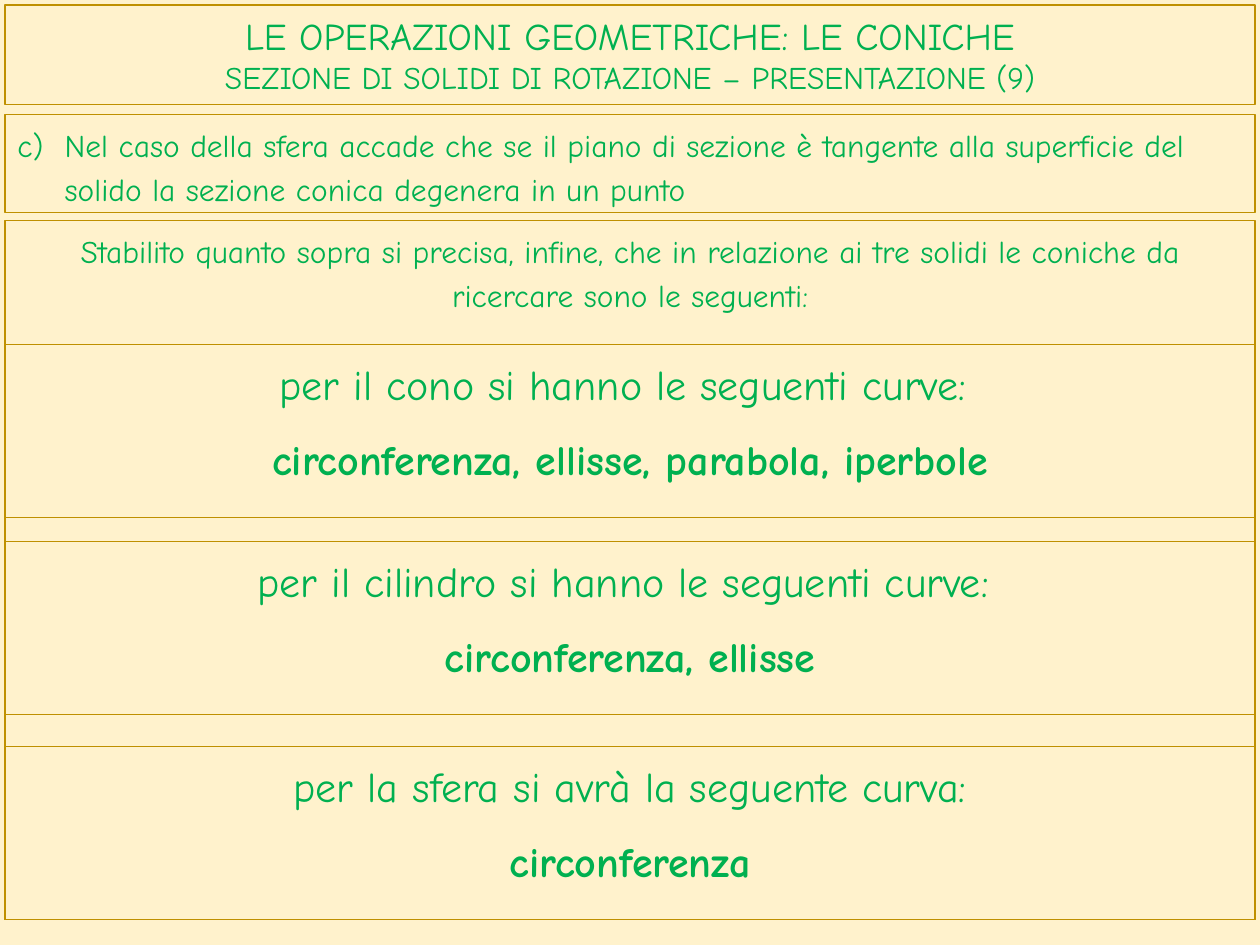
from pptx import Presentation
from pptx.dml.color import RGBColor
from pptx.enum.text import MSO_ANCHOR, MSO_AUTO_SIZE, PP_ALIGN
from pptx.util import Pt
from lxml.etree import SubElement
from pptx.oxml.ns import qn


def color(value):
    return RGBColor.from_string(value)


class SlideBuilder:
    font = "Comic Neue"
    ink = "00B050"
    border = "BF9000"
    left = 2.88
    width = 714.24

    def __init__(self, deck, background):
        self.slide = deck.slides.add_slide(deck.slide_layouts[5])
        self.slide.background.fill.solid()
        self.slide.background.fill.fore_color.rgb = color(background)

    def place(self, box, top, height):
        box.left, box.top = Pt(self.left), Pt(top)
        box.width, box.height = Pt(self.width), Pt(height)
        box.line.color.rgb = color(self.border)
        box.line.width = Pt(0.75)
        box.text_frame.word_wrap = True
        box.text_frame.auto_size = MSO_AUTO_SIZE.NONE

    def format_span(self, span, size, bold=False):
        span.font.name = self.font
        span.font.size = Pt(size)
        span.font.bold = bold
        span.font.color.rgb = color(self.ink)

    def title(self, lines, sizes, top, height):
        box = self.slide.shapes.title
        self.place(box, top, height)
        box.text_frame.vertical_anchor = MSO_ANCHOR.MIDDLE
        box.text_frame.text = "\v".join(lines)
        para = box.text_frame.paragraphs[0]
        para.alignment = PP_ALIGN.CENTER
        para.line_spacing = 1.0
        for span, size in zip(para.runs, sizes):
            self.format_span(span, size)

    def text_box(self, lines, size, top, height, alignment=PP_ALIGN.CENTER):
        box = self.slide.shapes.add_textbox(0, 0, 0, 0)
        self.place(box, top, height)
        box.text_frame.text = "\n".join(lines)
        for index, para in enumerate(box.text_frame.paragraphs):
            para.alignment = alignment
            para.line_spacing = 1.15
            para.space_after = Pt(10)
            self.format_span(para.runs[0], size, bold=index > 0)
        return box

    def lettered_box(self, text, start, size, top, height):
        box = self.text_box([text], size, top, height, PP_ALIGN.LEFT)
        properties = box.text_frame.paragraphs[0]._p.get_or_add_pPr()
        properties.set("marL", str(Pt(27)))
        properties.set("indent", str(Pt(-27)))
        SubElement(properties, qn("a:buFont"), typeface="+mj-lt")
        SubElement(properties, qn("a:buAutoNum"), type="alphaLcParenR", startAt=str(start))


def main():
    deck = Presentation()
    deck.slide_width, deck.slide_height = Pt(720), Pt(540)
    page = SlideBuilder(deck, "FFF2CC")
    page.title(
        ["LE OPERAZIONI GEOMETRICHE: LE CONICHE",
         "SEZIONE DI SOLIDI DI ROTAZIONE – PRESENTAZIONE (9)"],
        [21.6, 18], 2.88, 56.7)
    page.lettered_box(
        "Nel caso della sfera accade che se il piano di sezione è tangente alla "
        "superficie del solido la sezione conica degenera in un punto",
        3, 18, 65.3, 56)
    page.text_box(
        ["Stabilito quanto sopra si precisa, infine, che in relazione ai tre solidi "
         "le coniche da ricercare sono le seguenti:"],
        18, 126, 399.6)
    solids = [
        (196.8, "per il cono si hanno le seguenti curve: ",
         "circonferenza, ellisse, parabola, iperbole"),
        (309.5, "per il cilindro si hanno le seguenti curve: ",
         "circonferenza, ellisse"),
        (426.6, "per la sfera si avrà la seguente curva:", "circonferenza"),
    ]
    for top, heading, curves in solids:
        page.text_box([heading, curves], 24, top, 99)
    deck.save("out.pptx")


if __name__ == "__main__":
    main()
